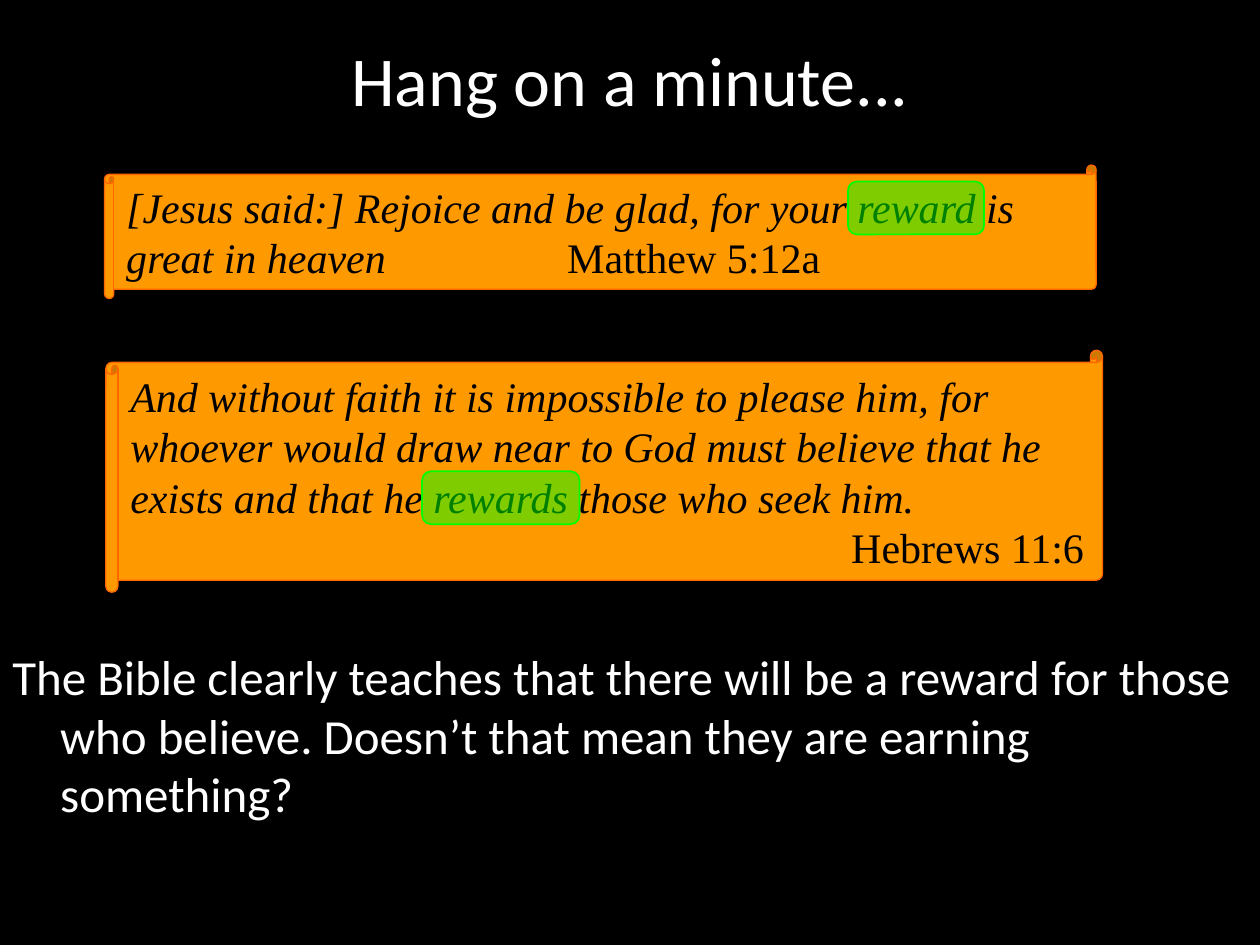
from dataclasses import dataclass, field
from typing import Optional

from lxml.etree import SubElement
from pptx import Presentation
from pptx.dml.color import RGBColor
from pptx.enum.shapes import MSO_SHAPE as Kind
from pptx.enum.text import MSO_ANCHOR as Anchor, MSO_AUTO_SIZE as Fit, PP_ALIGN as Align
from pptx.oxml.ns import qn
from pptx.util import Inches, Pt

BLACK = RGBColor(0, 0, 0)
WHITE = RGBColor(255, 255, 255)
ORANGE = RGBColor(255, 153, 0)
RUST = RGBColor(255, 102, 0)
GREEN = RGBColor(0, 255, 0)

WIDE, HIGH = Inches(10), Inches(7.5)


@dataclass
class Box:
    """Place on the slide, in percent of its width and height."""
    left: float
    top: float
    width: float
    height: float

    def emu(self) -> list[int]:
        sides = (WIDE, HIGH, WIDE, HIGH)
        parts = (self.left, self.top, self.width, self.height)
        return [round(side * part / 100) for side, part in zip(sides, parts)]


@dataclass
class Look:
    face: str
    size: float
    color: RGBColor


@dataclass
class Para:
    runs: list[tuple[str, bool]]  # wording, italic
    align: Align = Align.LEFT
    hang: float = 0
    before: float = 0


@dataclass
class Block:
    box: Box
    paras: list[Para]
    look: Look
    frame: dict = field(default_factory=dict)
    curl: Optional[float] = None  # set for a scroll


def set_all(part, values: dict) -> None:
    for name, value in values.items():
        setattr(part, name, value)


def write(frame, block: Block) -> None:
    set_all(frame, {"word_wrap": True, **block.frame})
    look = block.look
    for i, para in enumerate(block.paras):
        line = frame.add_paragraph() if i else frame.paragraphs[0]
        set_all(line, {"alignment": para.align, "space_before": Pt(para.before)})
        if para.hang:
            props = line._p.get_or_add_pPr()
            props.set("marL", str(Inches(para.hang)))
            props.set("indent", str(-Inches(para.hang)))
        for words, slant in para.runs:
            run = line.add_run()
            run.text = words
            set_all(run.font, {"name": look.face, "size": Pt(look.size), "italic": slant})
            run.font.color.rgb = look.color


def draw_shape(slide, kind: Kind, box: Box, bend: float,
               fill: RGBColor, edge: RGBColor, width: float):
    shape = slide.shapes.add_shape(kind, *box.emu())
    shape.adjustments[0] = bend
    shape.shadow.inherit = False
    shape.fill.solid()
    shape.fill.fore_color.rgb = fill
    shape.line.color.rgb = edge
    shape.line.width = Pt(width)
    return shape


def draw_block(slide, block: Block) -> None:
    if block.curl is None:
        shape = slide.shapes.add_textbox(*block.box.emu())
    else:
        shape = draw_shape(slide, Kind.HORIZONTAL_SCROLL, block.box,
                           block.curl, ORANGE, RUST, 0.75)
    write(shape.text_frame, block)


def draw_mark(slide, box: Box) -> None:
    shape = draw_shape(slide, Kind.ROUNDED_RECTANGLE, box, 0.17, GREEN, GREEN, 1)
    tint = shape._element.spPr.find(qn("a:solidFill")).find(qn("a:srgbClr"))
    SubElement(tint, qn("a:alpha")).set("val", "50000")


HEAD = Look("Calibri", 40, WHITE)
BODY = Look("Calibri", 28, WHITE)
VERSE = Look("Times New Roman", 24, BLACK)
MIDDLE = {"vertical_anchor": Anchor.MIDDLE}
GROW = {**MIDDLE, "auto_size": Fit.SHAPE_TO_FIT_TEXT}

BLOCKS = [
    # Title
    Block(Box(0, 0, 100, 16.67),
          [Para([("Hang on a minute...", False)], Align.CENTER)], HEAD, MIDDLE),
    # Closing question
    Block(Box(0, 67.73, 100, 32.27),
          [Para([("The Bible clearly teaches that there will be a reward for those "
                  "who believe. Doesn’t that mean they are earning something?", False)],
                hang=0.38, before=5.6)], BODY),
    # Verses on scrolls
    Block(Box(8.3, 17.47, 78.7, 14.13),
          [Para([("[Jesus said:] Rejoice and be glad, for your reward is "
                  "great in heaven\t\t\t", True), ("Matthew 5:12a", False)])],
          VERSE, GROW, 0.07),
    Block(Box(8.4, 37.07, 79.1, 25.6),
          [Para([("And without faith it is impossible to please him, for whoever "
                  "would draw near to God must believe that he exists and that he "
                  "rewards those who seek him.", True)]),
           Para([("Hebrews 11:6", False)], Align.RIGHT)],
          VERSE, GROW, 0.05),
]

# Highlights over the reward words
MARKS = [Box(67.3, 19.2, 10.8, 5.6), Box(33.5, 49.87, 12.5, 5.6)]


def main() -> None:
    deck = Presentation()
    set_all(deck, {"slide_width": WIDE, "slide_height": HIGH})
    slide = deck.slides.add_slide(deck.slide_layouts[6])
    slide.background.fill.solid()
    slide.background.fill.fore_color.rgb = BLACK
    for block in BLOCKS:
        draw_block(slide, block)
    for box in MARKS:
        draw_mark(slide, box)
    deck.save("out.pptx")


if __name__ == "__main__":
    main()
